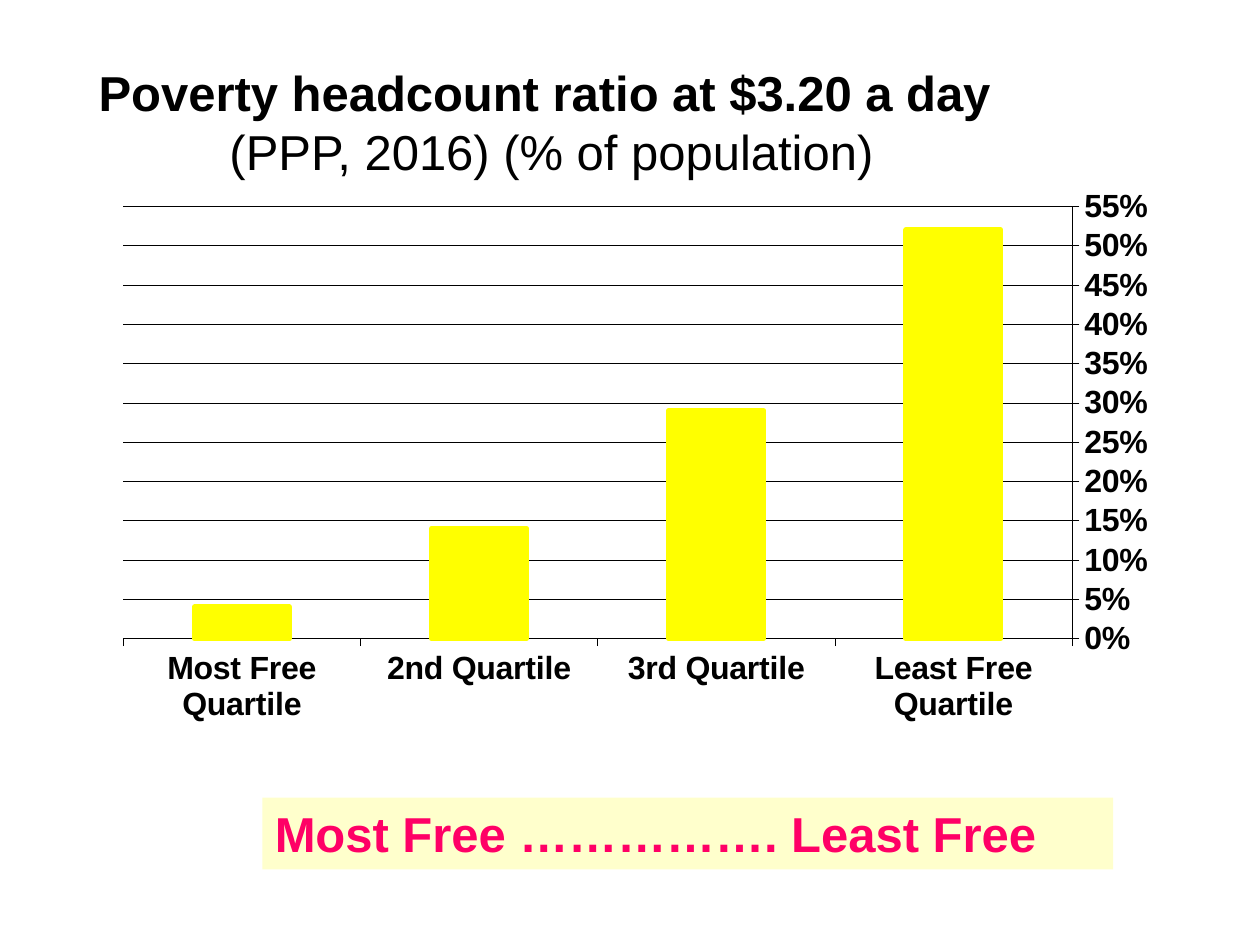
from lxml.etree import SubElement
from pptx import Presentation
from pptx.chart.data import CategoryChartData as Data
from pptx.dml.color import RGBColor
from pptx.enum.chart import XL_CHART_TYPE as Kind, XL_TICK_LABEL_POSITION as Label
from pptx.enum.chart import XL_TICK_MARK as Tick
from pptx.enum.shapes import MSO_SHAPE as Form
from pptx.enum.text import MSO_ANCHOR as Anchor, PP_ALIGN as Align
from pptx.oxml.ns import qn
from pptx.util import Cm, Pt


def tint(code):
    return RGBColor.from_string(code)


def write(par, text, size=28, color="000000", bold=True):
    run = par.add_run()
    run.text = text
    font = run.font
    font.name, font.size, font.bold = "Arial", Pt(size), bold
    font.color.rgb = tint(color)


def stroke(line, color, width):
    line.color.rgb = tint(color)
    line.width = Pt(width)


def place(chart, **box):
    """Fix the inner plot area, in fractions of the chart."""
    area = chart._chartSpace.chart.plotArea
    for old in area.findall(qn("c:layout")):
        area.remove(old)
    layout = SubElement(area, qn("c:layout"))
    area.insert(0, layout)
    manual = SubElement(layout, qn("c:manualLayout"))
    parts = {"layoutTarget": "inner", "xMode": "edge", "yMode": "edge", **box}
    for name, val in parts.items():
        SubElement(manual, qn("c:" + name)).set("val", str(val))


class Page:
    ink = "000000"
    hair = 0.25
    size = 18.3

    def __init__(self, deck):
        self.slide = deck.slides.add_slide(deck.slide_layouts[6])

    def title(self, head, sub, *box):
        frame = self.slide.shapes.add_textbox(*map(Cm, box)).text_frame
        frame.word_wrap = True
        frame.vertical_anchor = Anchor.MIDDLE
        par = frame.paragraphs[0]
        par.alignment = Align.CENTER
        write(par, head)
        par.add_line_break()
        write(par, sub, bold=False)

    def banner(self, text, fill, color, *box):
        shape = self.slide.shapes.add_shape(Form.RECTANGLE, *map(Cm, box))
        shape.shadow.inherit = False
        shape.fill.solid()
        shape.fill.fore_color.rgb = tint(fill)
        shape.line.fill.background()
        frame = shape.text_frame
        frame.word_wrap = True
        frame.vertical_anchor = Anchor.TOP
        par = frame.paragraphs[0]
        par.alignment = Align.LEFT
        write(par, text, color=color)

    def axis(self, axis):
        axis.major_tick_mark = Tick.OUTSIDE
        axis.minor_tick_mark = Tick.NONE
        stroke(axis.format.line, self.ink, self.hair)
        self.style(axis.tick_labels.font)

    def style(self, font):
        font.name, font.size, font.bold = "Arial", Pt(self.size), True
        font.color.rgb = tint(self.ink)

    def bars(self, rows, color, *box):
        data = Data(number_format="0%")
        data.categories = list(rows)
        data.add_series("Series 1", list(rows.values()))
        chart = self.slide.shapes.add_chart(
            Kind.COLUMN_CLUSTERED, *map(Cm, box), data).chart
        chart.has_legend = chart.has_title = False
        self.style(chart.font)
        plot = chart.plots[0]
        plot.gap_width = 150
        plot.vary_by_categories = False
        look = plot.series[0].format
        look.fill.solid()
        look.fill.fore_color.rgb = tint(color)
        stroke(look.line, color, 3.05)

        cats, vals = chart.category_axis, chart.value_axis
        self.axis(cats)
        cats.reverse_order = True
        cats.tick_label_position = Label.LOW
        self.axis(vals)
        vals.minimum_scale, vals.maximum_scale = 0, 0.55
        vals.major_unit = 0.05
        vals.tick_labels.number_format = "0%"
        vals.tick_labels.number_format_is_linked = False
        stroke(vals.major_gridlines.format.line, self.ink, self.hair)
        place(chart, x=0.124, y=0.044, w=0.759, h=0.768)


def main():
    deck = Presentation()
    deck.slide_width, deck.slide_height = Cm(25.4), Cm(19.05)
    page = Page(deck)
    page.title("Poverty headcount ratio at $3.20 a day ",
               "(PPP, 2016) (% of population)", 0, 0, 22.23, 4.88)
    rates = {"Least Free Quartile": 0.52, "3rd Quartile": 0.29,
             "2nd Quartile": 0.14, "Most Free Quartile": 0.04}
    page.bars(rates, "FFFF00", -0.64, 3.66, 25.2, 11.35)
    page.banner("Most Free ……………. Least Free", "FFFFCC", "FF0066",
                5.29, 16.08, 17.15, 1.45)
    deck.save("out.pptx")


if __name__ == "__main__":
    main()
